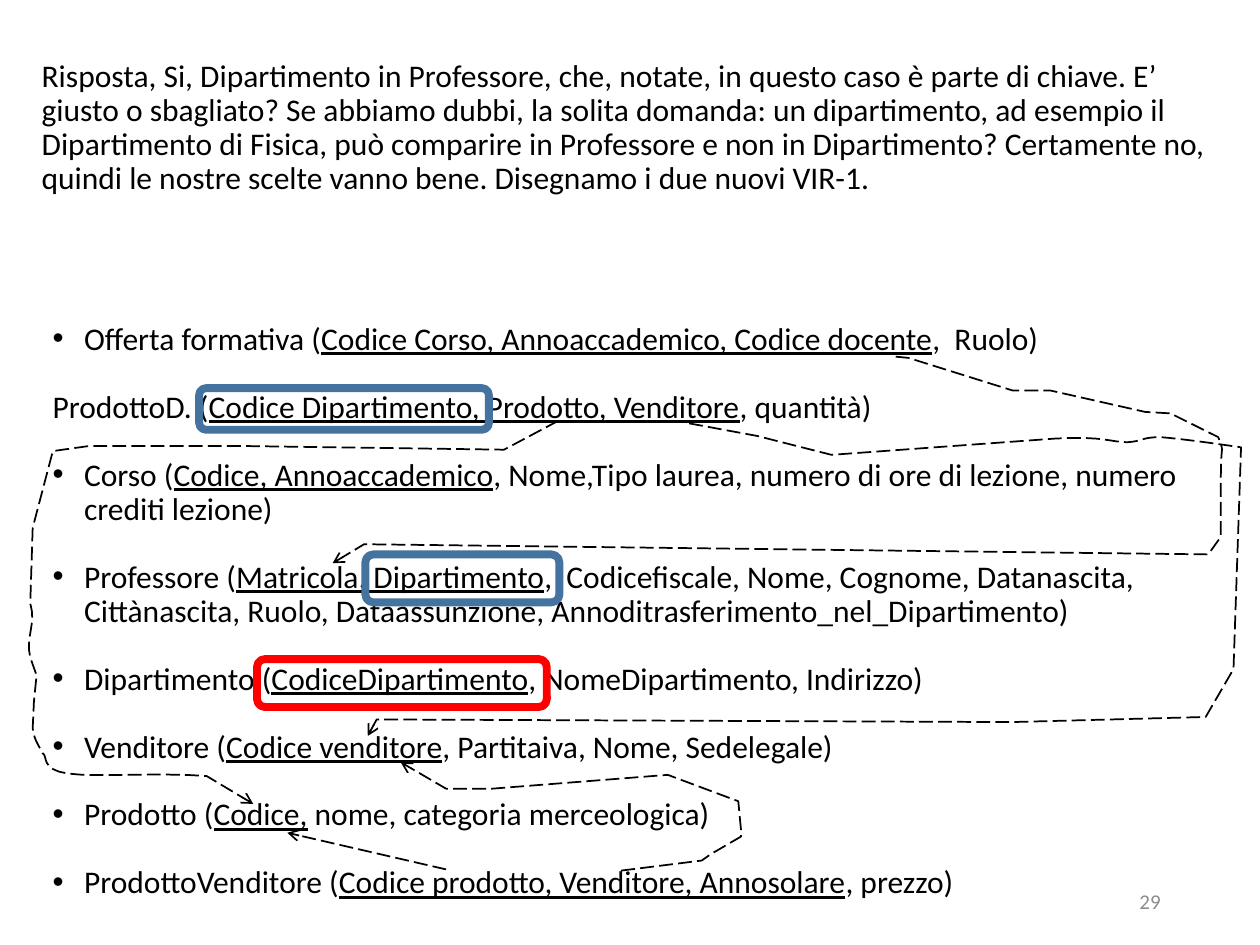
from lxml import etree
from pptx import Presentation
from pptx.dml import color
from pptx.enum import dml, shapes, text
from pptx.oxml import ns
from pptx.util import Pt

FONT = "Calibri"
BODY_BOX = (23, 181, 688.3, 349.2)

QUESTION = (
    "Risposta, Si, Dipartimento in Professore, che, notate, in questo caso è parte di chiave. "
    "E’ giusto o sbagliato? Se abbiamo dubbi, la solita domanda: un dipartimento, ad esempio il "
    "Dipartimento di Fisica, può comparire in Professore e non in Dipartimento? Certamente no, "
    "quindi le nostre scelte vanno bene. Disegnamo i due nuovi VIR-1."
)

RELATIONS = [
    ("Offerta formativa (", "Codice Corso, Annoaccademico, Codice docente", ",  Ruolo)"),
    ("ProdottoD. (", "Codice Dipartimento, Prodotto, Venditore", ", quantità)"),
    ("Corso (", "Codice, Annoaccademico",
     ", Nome,Tipo laurea, numero di ore di lezione, numero crediti lezione)"),
    ("Professore (", "Matricola, Dipartimento",
     ",  Codicefiscale, Nome, Cognome, Datanascita, Cittànascita, Ruolo, "
     "Dataassunzione, Annoditrasferimento_nel_Dipartimento)"),
    ("Dipartimento (", "CodiceDipartimento", ", NomeDipartimento, Indirizzo)"),
    ("Venditore (", "Codice venditore", ", Partitaiva, Nome, Sedelegale)"),
    ("Prodotto (", "Codice,", " nome, categoria merceologica)"),
    ("ProdottoVenditore (", "Codice prodotto, Venditore, Annosolare", ", prezzo)"),
]
UNBULLETED = "ProdottoD. ("

# A pair is a straight step; six numbers are a cubic curve.
REFERENCES = [
    [(370.8, 60.9), (409.7, 68.1), (452.2, 78.9), (580.4, 69.6),
     (608.4, 68.1, 611.3, 71.7, 621.4, 71.7), (630.8, 71, 629.3, 68.8, 640.1, 68.8),
     (650.9, 69.6, 671.1, 72.4, 686.2, 74.6), (681.9, 201.3), (666, 228.7),
     (555.2, 231.6), (192.3, 230.1), (187.2, 239.5)],
    [(332, 316.5), (378, 310.8), (383.1, 307.2), (400.4, 297.1), (400.4, 292.8),
     (398.9, 276.9), (358.6, 261.8), (258.5, 269.7), (231.9, 269.7), (206, 254.6)],
    [(296, 59.5), (265, 76), (113.8, 73.9), (28.1, 73.9), (7.2, 76.8), (-4.3, 120.7),
     (-5.7, 163.9), (-2.1, 175.4, -8.6, 183.3, -5.7, 194.8), (-2.1, 204.9),
     (-3.6, 220), (-4.3, 235.2), (-3.6, 240.9, -2.1, 243.1, 1.5, 249.6),
     (4.4, 251, 0, 258.9, 15.9, 261.1), (31, 263.2, 68.4, 260.4, 95.1, 262.5),
     (121.7, 278.4)],
    [(231.9, 315.8), (141.2, 294.9)],
    [(488.9, 22.8), (496.1, 23.5), (555.9, 42.2), (577.5, 42.2), (631.5, 54.4),
     (645.9, 55.2), (673.2, 68.8), (676.8, 78.2, 674.7, 71.7, 674.7, 90.4),
     (674.7, 125.7), (667.5, 135.8), (185.1, 130), (167.1, 140.8)],
]

KEY_FRAMES = [
    ((90.8, 40.8, 165.6, 23.8), "43739E"),
    ((123.9, 195.6, 165.6, 27.4), "FF0000"),
    ((185.8, 135.8, 110.9, 27.4), "43739E"),
]


def rgb(value):
    return color.RGBColor.from_string(value)


def set_font(font, size, hex_color):
    font.name = FONT
    font.size = Pt(size)
    font.color.rgb = rgb(hex_color)


def add_child(parent, tag, **attributes):
    return etree.SubElement(parent, ns.qn(tag), attributes)


def place_title(slide, box):
    title = slide.shapes.title
    title.left, title.top, title.width, title.height = map(Pt, box)
    frame = title.text_frame
    frame.text = QUESTION
    frame.auto_size = text.MSO_AUTO_SIZE.NONE
    frame.vertical_anchor = text.MSO_ANCHOR.MIDDLE
    paragraph = frame.paragraphs[0]
    paragraph.alignment = text.PP_ALIGN.LEFT
    paragraph.line_spacing = 0.9
    set_font(paragraph.font, 18, "000000")


def place_relations(slide, box):
    frame = slide.shapes.add_textbox(*map(Pt, box)).text_frame
    frame.word_wrap = True
    for index, (name, key, attributes) in enumerate(RELATIONS):
        paragraph = frame.add_paragraph() if index else frame.paragraphs[0]
        paragraph.line_spacing = 0.9
        if index:
            paragraph.space_before = Pt(19.4)
        if name != UNBULLETED:
            properties = paragraph._p.get_or_add_pPr()
            properties.set("marL", str(Pt(18)))
            properties.set("indent", str(-Pt(18)))
            add_child(properties, "a:buFont", typeface="Arial")
            add_child(properties, "a:buChar", char="•")
        set_font(paragraph.font, 18, "000000")
        for part in (name, key, attributes):
            run = paragraph.add_run()
            run.text = part
            if part == key:
                run.font.underline = True


def trace(steps, samples=8):
    points = [steps[0]]
    for step in steps[1:]:
        if len(step) == 2:
            points.append(step)
            continue
        controls = [points[-1], step[:2], step[2:4], step[4:]]
        for n in range(1, samples + 1):
            t = n / samples
            weights = ((1 - t) ** 3, 3 * t * (1 - t) ** 2, 3 * t * t * (1 - t), t ** 3)
            points.append(tuple(
                sum(w * c[axis] for w, c in zip(weights, controls)) for axis in (0, 1)))
    return points


def place_references(slide, box):
    left, top = box[:2]
    for steps in REFERENCES:
        points = [(Pt(left + x), Pt(top + y)) for x, y in trace(steps)]
        if len(points) == 2:
            reference = slide.shapes.add_connector(
                shapes.MSO_CONNECTOR.STRAIGHT, *points[0], *points[1])
        else:
            builder = slide.shapes.build_freeform(*points[0])
            builder.add_line_segments(points[1:], close=False)
            reference = builder.convert_to_shape()
            reference.fill.background()
        line = reference.line
        line.color.rgb = rgb("000000")
        line.width = Pt(1)
        line.dash_style = dml.MSO_LINE.LONG_DASH
        add_child(line._get_or_add_ln(), "a:tailEnd", type="arrow")
        add_child(reference._element.spPr, "a:effectLst")


def place_key_frames(slide, box):
    for (x, y, width, height), hex_color in KEY_FRAMES:
        key_frame = slide.shapes.add_shape(
            shapes.MSO_SHAPE.ROUNDED_RECTANGLE,
            Pt(box[0] + x), Pt(box[1] + y), Pt(width), Pt(height))
        key_frame.shadow.inherit = False
        key_frame.fill.background()
        key_frame.line.color.rgb = rgb(hex_color)
        key_frame.line.width = Pt(4.5)


def place_page_number(slide, box):
    frame = slide.shapes.add_textbox(*map(Pt, box)).text_frame
    frame.word_wrap = True
    frame.vertical_anchor = text.MSO_ANCHOR.MIDDLE
    paragraph = frame.paragraphs[0]
    paragraph.text = "29"
    paragraph.alignment = text.PP_ALIGN.RIGHT
    set_font(paragraph.font, 12, "8C8C8C")


def main():
    deck = Presentation()
    deck.slide_width, deck.slide_height = Pt(720), Pt(540)
    slide = deck.slides.add_slide(deck.slide_layouts[5])
    place_title(slide, (16.6, 38.9, 690.5, 68.4))
    place_relations(slide, BODY_BOX)
    place_references(slide, BODY_BOX)
    place_key_frames(slide, BODY_BOX)
    place_page_number(slide, (508.3, 500.4, 162, 28.8))
    deck.save("out.pptx")


if __name__ == "__main__":
    main()
